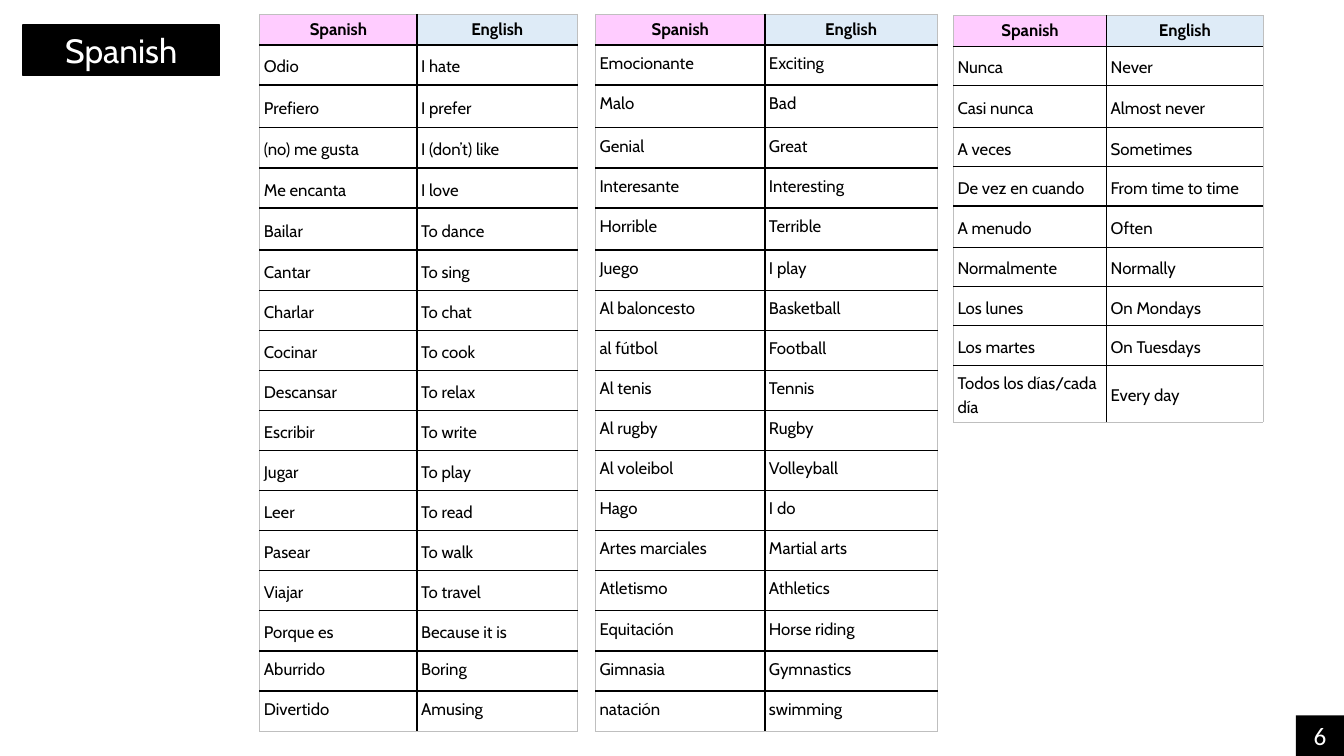
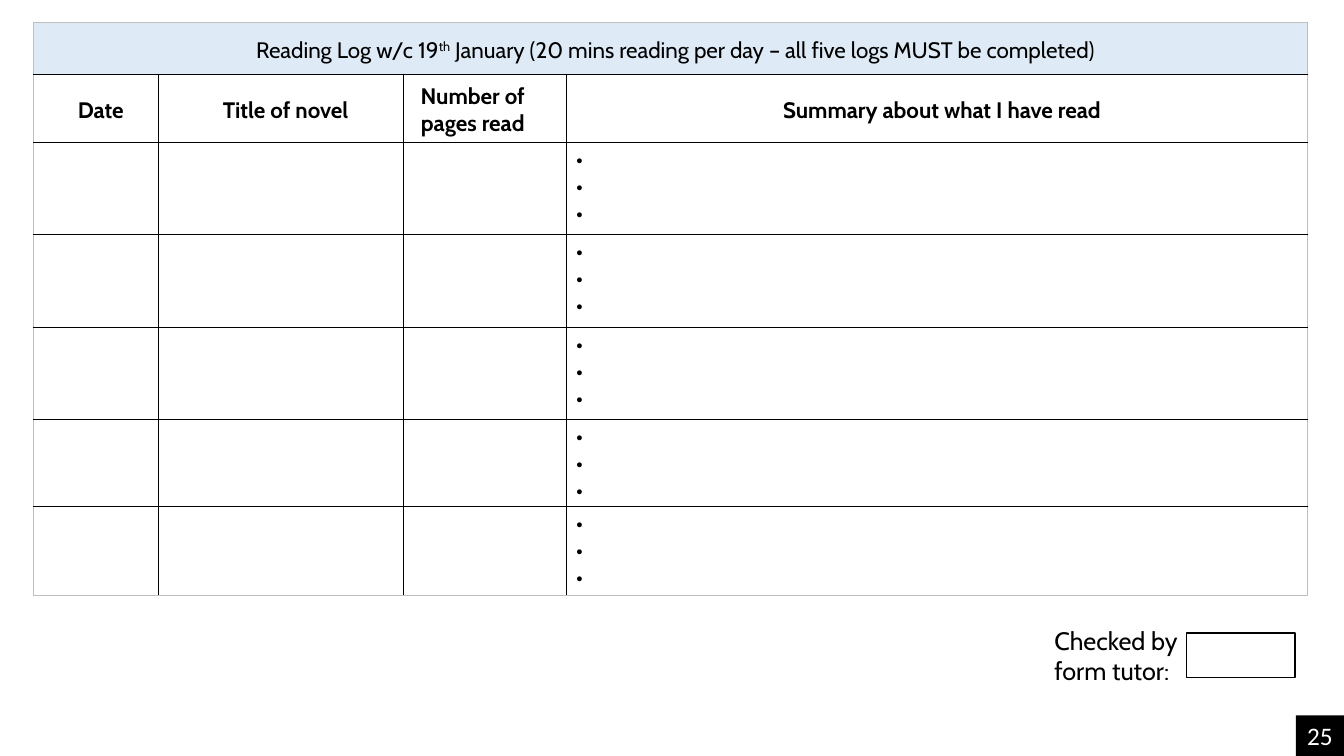
from dataclasses import dataclass
from typing import Any

from lxml.etree import SubElement
from pptx import Presentation
from pptx.dml.color import RGBColor
from pptx.enum.shapes import MSO_SHAPE
from pptx.enum.text import MSO_ANCHOR, PP_ALIGN
from pptx.oxml.ns import qn
from pptx.util import Cm, Pt


# Theme
@dataclass(frozen=True)
class Theme:
    black: str = "000000"
    white: str = "FFFFFF"
    pink: str = "FFCCFF"
    blue: str = "DEEBF7"
    grey: str = "BFBFBF"
    font: str = "Cabin"
    digit: str = "Calibri"
    small: int = 12
    body: int = 16
    label: int = 18
    title: int = 24


THEME = Theme()


@dataclass(frozen=True)
class Box:
    left: float
    top: float
    width: float
    height: float

    def emu(self) -> tuple[Cm, Cm, Cm, Cm]:
        return Cm(self.left), Cm(self.top), Cm(self.width), Cm(self.height)


@dataclass(frozen=True)
class Vocab:
    left: float
    top: float
    cols: tuple[float, float]
    pitch: float
    last: float
    middle: int  # number of leading word rows centred vertically
    words: tuple[tuple[str, str], ...]


@dataclass(frozen=True)
class Head:
    text: str
    width: float
    right: float = 0


# Content
VERBS = (
    ("Odio", "I hate"), ("Prefiero", "I prefer"),
    ("(no) me gusta", "I (don’t) like"), ("Me encanta", "I love"),
    ("Bailar", "To dance"), ("Cantar", "To sing"), ("Charlar", "To chat"),
    ("Cocinar", "To cook"), ("Descansar", "To relax"),
    ("Escribir", "To write"), ("Jugar", "To play"), ("Leer", "To read"),
    ("Pasear", "To walk"), ("Viajar", "To travel"),
    ("Porque es", "Because it is"), ("Aburrido", "Boring"),
    ("Divertido", "Amusing"),
)
SPORTS = (
    ("Emocionante", "Exciting"), ("Malo", "Bad"), ("Genial", "Great"),
    ("Interesante", "Interesting"), ("Horrible", "Terrible"),
    ("Juego", "I play"), ("Al baloncesto", "Basketball"),
    ("al fútbol", "Football"), ("Al tenis", "Tennis"),
    ("Al rugby", "Rugby"), ("Al voleibol", "Volleyball"),
    ("Hago", "I do"), ("Artes marciales", "Martial arts"),
    ("Atletismo", "Athletics"), ("Equitación", "Horse riding"),
    ("Gimnasia", "Gymnastics"), ("natación", "swimming"),
)
TIMES = (
    ("Nunca", "Never"), ("Casi nunca", "Almost never"),
    ("A veces", "Sometimes"), ("De vez en cuando", "From time to time"),
    ("A menudo", "Often"), ("Normalmente", "Normally"),
    ("Los lunes", "On Mondays"), ("Los martes", "On Tuesdays"),
    ("Todos los días/cada día", "Every day"),
)
LISTS = (
    Vocab(6.55, 0.36, (3.96, 4.04), 1.01, 1.01, 15, VERBS),
    Vocab(15.01, 0.36, (4.27, 4.34), 1.01, 1.01, 0, SPORTS),
    Vocab(24.03, 0.39, (3.86, 3.94), 0.99, 1.41, 9, TIMES),
)
EXTRA = {1: 0.07, 4: 0.05}  # slightly taller word rows
HEADS = (
    Head("Date", 3.15), Head("Title of novel", 6.17),
    Head("Number of pages read", 4.11, 0.85),
    Head("Summary about what I have read", 18.69),
)
LOG_ROWS = (1.31, 1.72, 2.32, 2.34, 2.32, 2.19, 2.24)
LOG_TITLE = (
    ("Reading Log w/c 19", False), ("th", True),
    (" January (20 mins reading per day – all five logs MUST be completed)",
     False),
)


# Shared helpers
def put(item: Any, **values: Any) -> None:
    for name, value in values.items():
        setattr(item, name, value)


def write(para: Any, text: str, size: int, color: str = THEME.black,
          bold: bool = False, font: str = THEME.font) -> Any:
    run = para.add_run()
    run.text = text
    put(run.font, name=font, size=Pt(size), bold=bold)
    run.font.color.rgb = RGBColor.from_string(color)
    return run


def indent(para: Any, left: float, right: float = 0) -> None:
    props = para._p.get_or_add_pPr()
    for key, value in {"marL": left, "marR": right}.items():
        props.set(key, str(int(Cm(value))))


def inset(item: Any, side: float, top: float, low: float) -> None:
    put(item, margin_left=Cm(side), margin_right=Cm(side),
        margin_top=Cm(top), margin_bottom=Cm(low))


def edge(cell: Any, side: str, outer: bool) -> None:
    width, color = (0.75, THEME.grey) if outer else (1, THEME.black)
    line = SubElement(cell._tc.get_or_add_tcPr(), qn(f"a:ln{side}"),
                      w=str(int(Pt(width))))
    fill = SubElement(line, qn("a:solidFill"))
    SubElement(fill, qn("a:srgbClr"), val=color)


def paint(cell: Any, color: str) -> None:
    cell.fill.solid()
    cell.fill.fore_color.rgb = RGBColor.from_string(color)


def grid(slide: Any, left: float, top: float, cols: tuple[float, ...],
         rows: tuple[float, ...], merge: bool = False) -> Any:
    box = Box(left, top, sum(cols), sum(rows))
    table = slide.shapes.add_table(len(rows), len(cols), *box.emu()).table
    put(table, first_row=False, horz_banding=False)
    for col, width in zip(table.columns, cols):
        col.width = Cm(width)
    for row, height in zip(table.rows, rows):
        row.height = Cm(height)
    if merge:
        table.cell(0, 0).merge(table.cell(0, len(cols) - 1))
    for r in range(len(rows)):
        for c in range(len(cols)):
            cell = table.cell(r, c)
            if cell.is_spanned:
                continue
            end = c + (cell.span_width if cell.is_merge_origin else 1)
            sides = {"L": c == 0, "R": end == len(cols),
                     "T": r == 0, "B": r == len(rows) - 1}
            for side, outer in sides.items():
                edge(cell, side, outer)
            paint(cell, THEME.white)
    return table


def block(slide: Any, box: Box, fill: str | None) -> Any:
    shape = slide.shapes.add_shape(MSO_SHAPE.RECTANGLE, *box.emu())
    shape.shadow.inherit = False
    if fill:
        shape.fill.solid()
        shape.fill.fore_color.rgb = RGBColor.from_string(fill)
    else:
        shape.fill.background()
    shape.line.color.rgb = RGBColor.from_string(THEME.black)
    shape.line.width = Pt(1)
    return shape


def page(slide: Any, number: int) -> None:
    shape = block(slide, Box(32.66, 18.03, 1.21, 1.02), THEME.black)
    shape.line.fill.background()
    frame = shape.text_frame
    put(frame, vertical_anchor=MSO_ANCHOR.MIDDLE, word_wrap=True)
    para = frame.paragraphs[0]
    para.alignment = PP_ALIGN.CENTER
    write(para, str(number), THEME.label, THEME.white, font=THEME.digit)


# Vocabulary slide
def banner(slide: Any, text: str) -> None:
    shape = slide.shapes.title
    put(shape, **dict(zip(("left", "top", "width", "height"),
                          Box(0.58, 0.63, 4.95, 1.27).emu())))
    shape.fill.solid()
    shape.fill.fore_color.rgb = RGBColor.from_string(THEME.black)
    shape.line.color.rgb = RGBColor.from_string(THEME.black)
    shape.line.width = Pt(1)
    frame = shape.text_frame
    put(frame, vertical_anchor=MSO_ANCHOR.MIDDLE, word_wrap=True)
    para = frame.paragraphs[0]
    para.alignment = PP_ALIGN.CENTER
    write(para, text, THEME.title, THEME.white)


def vocab(slide: Any, item: Vocab) -> None:
    count = len(item.words)
    body = [item.pitch + EXTRA.get(i, 0) for i in range(count - 1)]
    table = grid(slide, item.left, item.top, item.cols,
                 (0.77, *body, item.last))
    heads = (("Spanish", THEME.pink), ("English", THEME.blue))
    for c, (text, color) in enumerate(heads):
        cell = table.cell(0, c)
        paint(cell, color)
        para = cell.text_frame.paragraphs[0]
        para.alignment = PP_ALIGN.CENTER
        write(para, text, THEME.small, bold=True)
    for r, pair in enumerate(item.words):
        for c, text in enumerate(pair):
            cell = table.cell(r + 1, c)
            inset(cell, 0.1, 0.1, 0.1)
            cell.vertical_anchor = (MSO_ANCHOR.MIDDLE if r < item.middle
                                    else MSO_ANCHOR.TOP)
            para = cell.text_frame.paragraphs[0]
            put(para, line_spacing=1.19, space_after=Pt(6))
            write(para, text, THEME.small)


# Reading log slide
def log(slide: Any) -> None:
    table = grid(slide, 0.84, 0.56, tuple(h.width for h in HEADS),
                 LOG_ROWS, merge=True)
    top = table.cell(0, 0)
    paint(top, THEME.blue)
    cells = [top, *(table.cell(1, c) for c in range(len(HEADS)))]
    for cell in cells:
        inset(cell, 0, 0.1, 0)
        cell.vertical_anchor = MSO_ANCHOR.MIDDLE
        put(cell.text_frame.paragraphs[0], alignment=PP_ALIGN.CENTER,
            space_before=Pt(2.5))
    para = top.text_frame.paragraphs[0]
    indent(para, 0.25)
    for text, raised in LOG_TITLE:
        run = write(para, text, THEME.body)
        if raised:
            run._r.get_or_add_rPr().set("baseline", "30000")
    for cell, head in zip(cells[1:], HEADS):
        para = cell.text_frame.paragraphs[0]
        indent(para, 0.25, head.right)
        write(para, head.text, THEME.body, bold=True)
    for r in range(2, len(LOG_ROWS)):
        cell = table.cell(r, len(HEADS) - 1)
        inset(cell, 0, 0.08, 0)
        frame = cell.text_frame
        for i, gap in enumerate((2.4, 0.1, 0)):
            para = frame.add_paragraph() if i else frame.paragraphs[0]
            para.space_before = Pt(gap)
            indent(para, 0.25)
            write(para, "•", THEME.body)


def check(slide: Any) -> None:
    block(slide, Box(29.9, 15.95, 2.74, 1.12), None)
    label = slide.shapes.add_textbox(*Box(26.57, 15.72, 3.96, 1.57).emu())
    frame = label.text_frame
    frame.word_wrap = True
    inset(frame, 0, 0.03, 0)
    para = frame.paragraphs[0]
    para.space_before = Pt(1)
    write(para, "Checked by form tutor:", THEME.label)


def main() -> None:
    deck = Presentation()
    put(deck, slide_width=Cm(33.87), slide_height=Cm(19.05))
    words = deck.slides.add_slide(deck.slide_layouts[5])
    banner(words, "Spanish")
    for item in LISTS:
        vocab(words, item)
    page(words, 6)
    diary = deck.slides.add_slide(deck.slide_layouts[6])
    log(diary)
    check(diary)
    page(diary, 25)
    deck.save("out.pptx")


if __name__ == "__main__":
    main()
